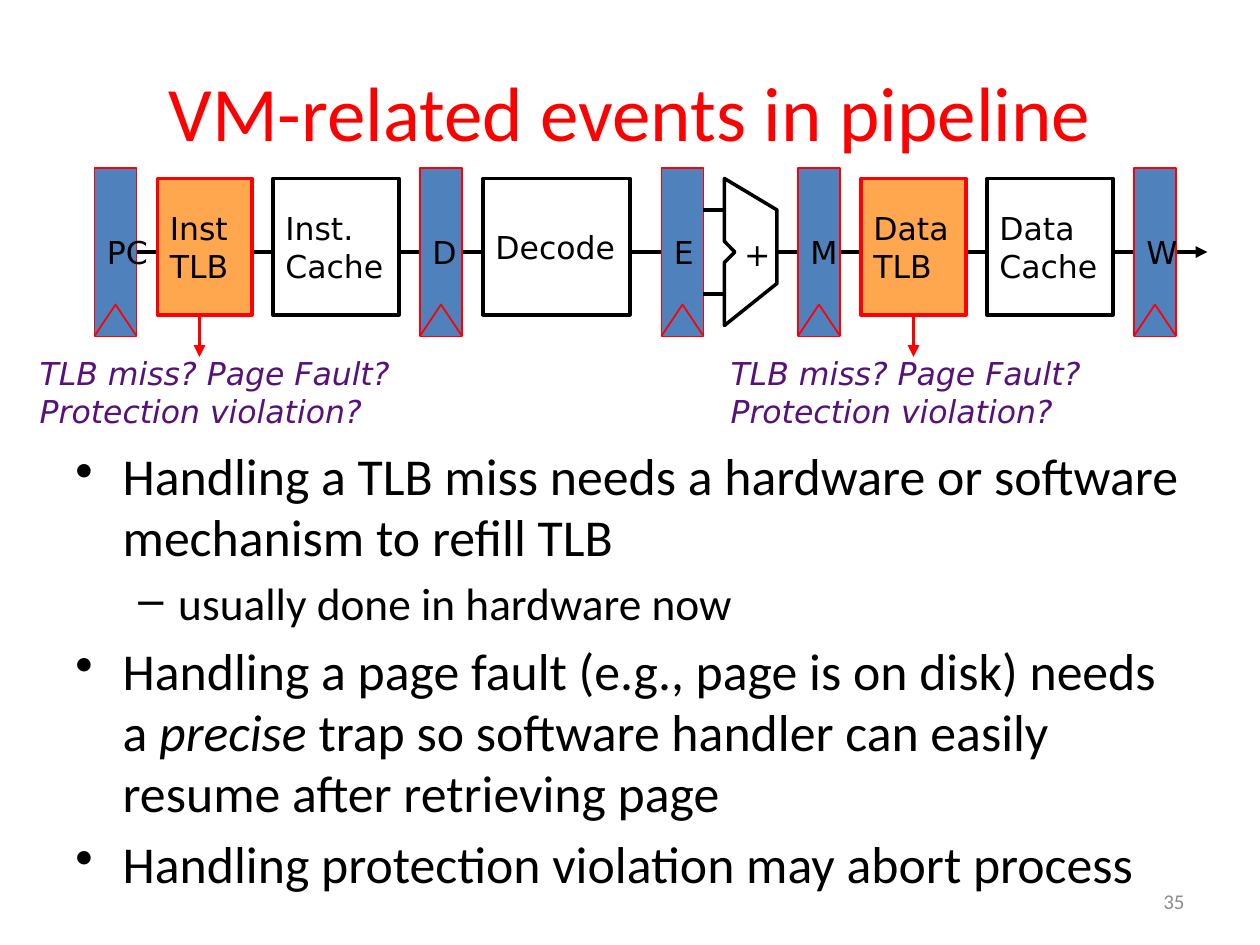
from dataclasses import dataclass

import pptx
import pptx.dml.color
import pptx.enum.shapes
import pptx.enum.text
import pptx.oxml
import pptx.oxml.ns
import pptx.util

EMU_PER_PX = 7620  # 120 px to the inch
ALIGN = pptx.enum.text.PP_ALIGN
ANCHOR = pptx.enum.text.MSO_ANCHOR
RECTANGLE = pptx.enum.shapes.MSO_SHAPE.RECTANGLE


@dataclass(frozen=True)
class Theme:
    text_font: str = "Calibri"
    diagram_font: str = "DejaVu Sans"
    black: str = "000000"
    white: str = "FFFFFF"
    red: str = "FF0000"
    register_blue: str = "4F81BD"
    tlb_orange: str = "FFA74F"
    event_purple: str = "56127A"
    number_gray: str = "8C8C8C"
    title_size: float = 44
    point_size: float = 29.6
    subpoint_size: float = 25.9
    diagram_size: float = 18
    number_size: float = 12
    wire_width: float = 2.25
    stage_width: float = 2
    register_width: float = 1


THEME = Theme()


@dataclass(frozen=True)
class Register:
    label: str
    left: int


@dataclass(frozen=True)
class Stage:
    label: str
    left: int
    width: int
    is_tlb: bool = False


@dataclass(frozen=True)
class Wire:
    start: tuple[int, int]
    end: tuple[int, int]
    color: str = THEME.black
    arrow: bool = False


@dataclass(frozen=True)
class Point:
    runs: tuple[str, ...]  # every second run is italic
    level: int = 0


WIRE_Y = 240
REGISTER_TOP, REGISTER_WIDTH, REGISTER_HEIGHT, CLOCK_HEIGHT = 160, 40, 160, 30
STAGE_TOP, STAGE_HEIGHT = 170, 130
STAGE_BOTTOM = STAGE_TOP + STAGE_HEIGHT

REGISTERS = [Register("PC", 90), Register("D", 400), Register("E", 630),
             Register("M", 760), Register("W", 1080)]
STAGES = [Stage("Inst TLB", 150, 90, True), Stage("Inst. Cache", 260, 120),
          Stage("Decode", 460, 140), Stage("Data TLB", 820, 100, True),
          Stage("Data Cache", 940, 120)]
ALU_OUTLINE = [(690, 170), (690, 230), (700, 240), (690, 250), (690, 310),
               (740, 270), (740, 200)]
MAIN_WIRES = [Wire((740, WIRE_Y), (1150, WIRE_Y), arrow=True),
              Wire((130, WIRE_Y), (630, WIRE_Y))]
ALU_INPUTS = [Wire((670, y), (690, y)) for y in (200, 280)]
EVENT_ARROWS = [Wire((x, STAGE_BOTTOM), (x, STAGE_BOTTOM + 40), THEME.red, True)
                for x in (190, 870)]
EVENTS = ["TLB miss? Page Fault?", "Protection violation?"]
EVENT_LEFTS = (26, 684)

POINTS = [
    Point(("Handling a TLB miss needs a hardware or software mechanism to refill TLB",)),
    Point(("usually done in hardware now",), level=1),
    Point(("Handling a page fault (e.g., page is on disk) needs a ", "precise ",
           "trap so software handler can easily resume after retrieving page")),
    Point(("Handling protection violation may abort process",)),
]
POINT_STYLES = [("•", THEME.point_size, 45, 45), ("–", THEME.subpoint_size, 98, 38)]


def px(length: int) -> pptx.util.Emu:
    return pptx.util.Emu(length * EMU_PER_PX)


def rgb(color: str) -> pptx.dml.color.RGBColor:
    return pptx.dml.color.RGBColor.from_string(color)


def set_font(paragraph, size: float, color: str, face: str) -> None:
    font = paragraph.font
    font.size, font.name, font.color.rgb = pptx.util.Pt(size), face, rgb(color)


def paint(shape, fill: str, line: str, width: float) -> None:
    shape.shadow.inherit = False
    shape.fill.solid()
    shape.fill.fore_color.rgb = rgb(fill)
    shape.line.color.rgb = rgb(line)
    shape.line.width = pptx.util.Pt(width)


def add_text(slide, box: tuple[int, int, int, int], lines: list[str], size: float,
             color: str, face: str, align=ALIGN.LEFT, wrap: bool = True,
             italic: bool = False) -> None:
    frame = slide.shapes.add_textbox(*map(px, box)).text_frame
    frame.word_wrap, frame.vertical_anchor = wrap, ANCHOR.MIDDLE
    frame.text = "\n".join(lines)
    for paragraph in frame.paragraphs:
        set_font(paragraph, size, color, face)
        paragraph.alignment, paragraph.font.italic = align, italic


def add_box(shapes, box: tuple[int, int, int, int], label: str, wrap: bool,
            fill: str, line: str, width: float) -> None:
    rectangle = shapes.add_shape(RECTANGLE, *map(px, box))
    paint(rectangle, fill, line, width)
    frame = rectangle.text_frame
    frame.text, frame.word_wrap, frame.vertical_anchor = label, wrap, ANCHOR.MIDDLE
    frame.paragraphs[0].alignment = ALIGN.LEFT
    set_font(frame.paragraphs[0], THEME.diagram_size, THEME.black, THEME.diagram_font)


def add_outline(shapes, corners: list[tuple[int, int]], close: bool,
                fill: str, line: str, width: float) -> None:
    builder = shapes.build_freeform(*corners[0], scale=EMU_PER_PX)
    builder.add_line_segments(corners[1:], close=close)
    paint(builder.convert_to_shape(), fill, line, width)


def add_register(slide, register: Register) -> None:
    """Group a register bar with the clock notch at its foot."""
    shapes = slide.shapes.add_group_shape().shapes
    left, bottom = register.left, REGISTER_TOP + REGISTER_HEIGHT
    style = (THEME.register_blue, THEME.red, THEME.register_width)
    add_box(shapes, (left, REGISTER_TOP, REGISTER_WIDTH, REGISTER_HEIGHT),
            register.label, False, *style)
    notch = [(left, bottom), (left + REGISTER_WIDTH // 2, bottom - CLOCK_HEIGHT),
             (left + REGISTER_WIDTH, bottom)]
    add_outline(shapes, notch, False, *style)


def add_stage(slide, stage: Stage) -> None:
    fill, line = (THEME.tlb_orange, THEME.red) if stage.is_tlb else (THEME.white, THEME.black)
    add_box(slide.shapes, (stage.left, STAGE_TOP, stage.width, STAGE_HEIGHT),
            stage.label, True, fill, line, THEME.stage_width)


def add_wire(slide, wire: Wire) -> None:
    connector = slide.shapes.add_connector(
        pptx.enum.shapes.MSO_CONNECTOR.STRAIGHT, *map(px, wire.start + wire.end))
    connector.line.color.rgb = rgb(wire.color)
    connector.line.width = pptx.util.Pt(THEME.wire_width)
    if wire.arrow:
        head = pptx.oxml.ns.qn("a:tailEnd")
        connector.line._get_or_add_ln().makeelement(head)
        line = connector.line._get_or_add_ln()
        line.append(line.makeelement(head, {"type": "triangle"}))
    properties = connector._element.spPr
    properties.append(properties.makeelement(pptx.oxml.ns.qn("a:effectLst")))


def add_points(slide, box: tuple[int, int, int, int], points: list[Point]) -> None:
    frame = slide.shapes.add_textbox(*map(px, box)).text_frame
    frame.word_wrap = True
    for index, point in enumerate(points):
        paragraph = frame.add_paragraph() if index else frame.paragraphs[0]
        bullet, size, indent, hanging = POINT_STYLES[point.level]
        paragraph.level = point.level
        paragraph.line_spacing = 0.98
        paragraph.space_before = pptx.util.Pt(round(size * 0.2, 1))
        set_font(paragraph, size, THEME.black, THEME.text_font)
        for position, text in enumerate(point.runs):
            run = paragraph.add_run()
            run.text = text
            if position % 2:
                run.font.italic = True
        properties = paragraph._p.get_or_add_pPr()
        properties.set("marL", str(px(indent)))
        properties.set("indent", str(-px(hanging)))
        mark = properties.makeelement(pptx.oxml.ns.qn("a:buChar"), {"char": bullet})
        properties.find(pptx.oxml.ns.qn("a:defRPr")).addprevious(mark)


def main() -> None:
    deck = pptx.Presentation()
    deck.slide_width, deck.slide_height = px(1200), px(900)
    slide = deck.slides.add_slide(deck.slide_layouts[6])
    add_text(slide, (60, 30, 1080, 150), ["VM-related events in pipeline"],
             THEME.title_size, THEME.red, THEME.text_font, ALIGN.CENTER)
    add_points(slide, (60, 420, 1080, 430), POINTS)
    add_text(slide, (860, 834, 280, 48), ["35"], THEME.number_size,
             THEME.number_gray, THEME.text_font, ALIGN.RIGHT)
    for wire in MAIN_WIRES:
        add_wire(slide, wire)
    for register in REGISTERS:
        add_register(slide, register)
    for stage in STAGES:
        add_stage(slide, stage)
    add_outline(slide.shapes, ALU_OUTLINE, True, THEME.white, THEME.black, THEME.stage_width)
    for wire in ALU_INPUTS + EVENT_ARROWS:
        add_wire(slide, wire)
    add_text(slide, (697, 220, 46, 44), ["+"], THEME.diagram_size, THEME.black,
             THEME.diagram_font, wrap=False)
    for left in EVENT_LEFTS:
        add_text(slide, (left, 331, 360, 84), EVENTS, THEME.diagram_size,
                 THEME.event_purple, THEME.diagram_font, wrap=False, italic=True)
    deck.save("out.pptx")


if __name__ == "__main__":
    main()
